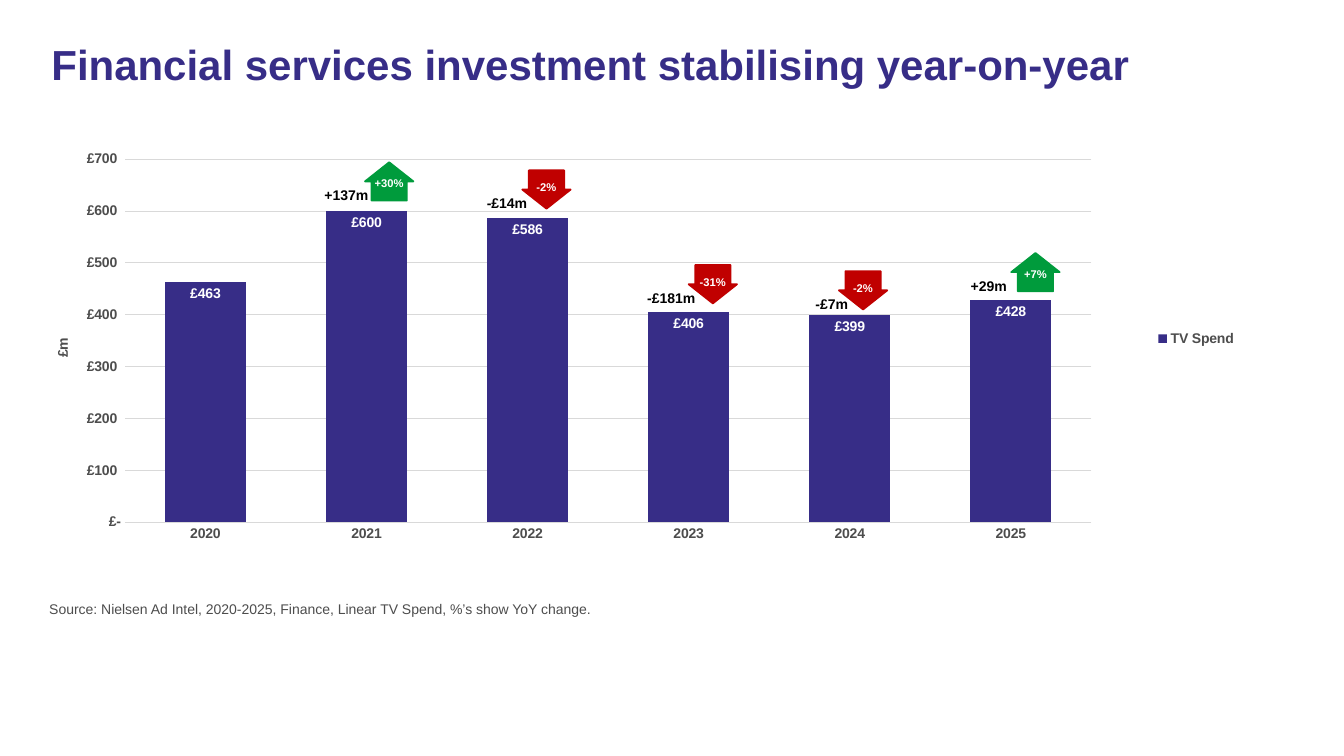
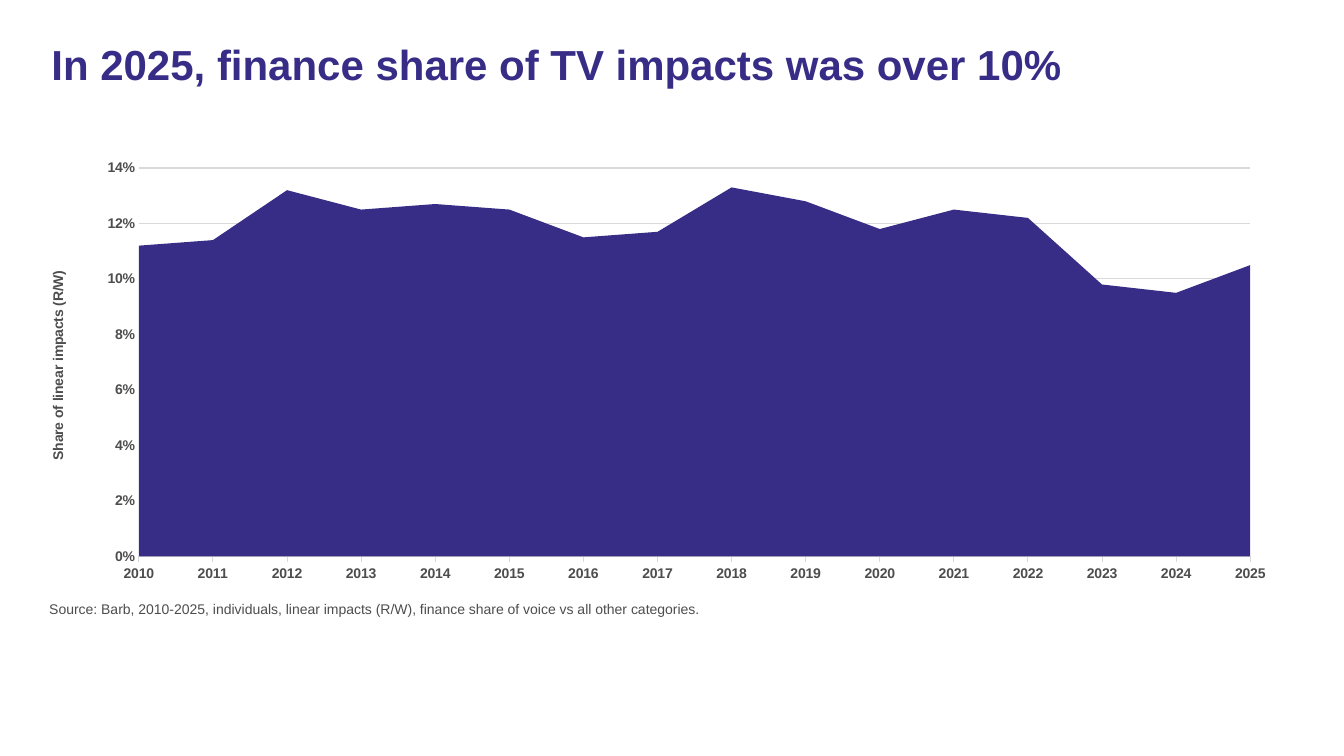
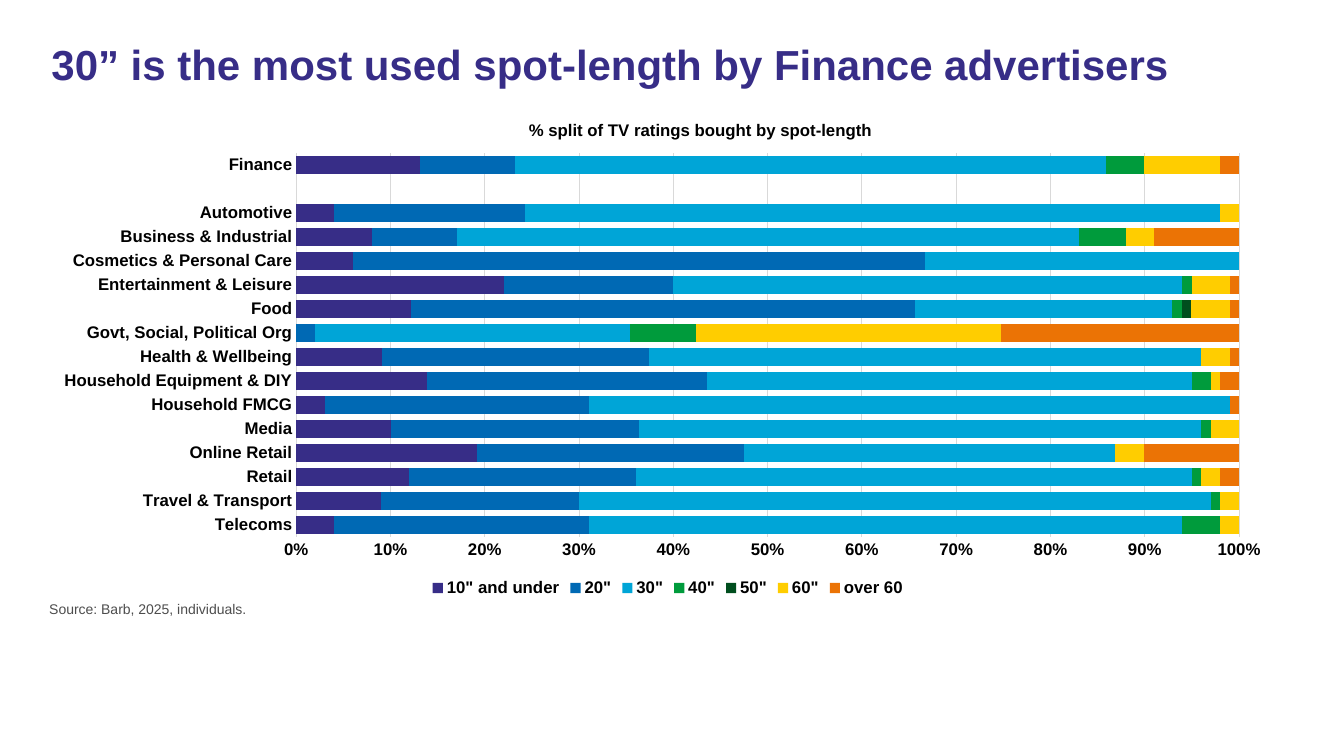
from lxml import etree
from pptx import Presentation
from pptx import util as u
from pptx.chart import data as chart_data
from pptx.dml import color as dml
from pptx.enum import chart as kinds
from pptx.enum import shapes, text
from pptx.oxml import ns

PURPLE, GREY, RULE = "372D87", "4D4D4D", "D9D9D9"
BLACK, WHITE, GREEN, RED = "000000", "FFFFFF", "009B3C", "C00000"
FONT = "Arial"
TITLE_BOX = (0.41, 0.39, 12.4, 1.12)
SOURCE_BOX = (0.39, 5.91, 12.4, 0.33)
ARROW_W, ARROW_H = 0.48, 0.38
POUNDS = '_-"£"* #,##0_-;\\-"£"* #,##0_-;_-"£"* "-"'

CHANGES = [
    ("+137m", "+30%", 3.12, 3.62, 1.61),
    ("-£14m", "-2%", 4.73, 5.18, 1.69),
    ("-£181m", "-31%", 6.32, 6.83, 2.63),
    ("-£7m", "-2%", 7.99, 8.32, 2.69),
    ("+29m", "+7%", 9.53, 10.03, 2.51),
]
SHARES = [0.112, 0.114, 0.132, 0.125, 0.127, 0.125, 0.115, 0.117,
          0.133, 0.128, 0.118, 0.125, 0.122, 0.098, 0.095, 0.105]
SECTORS = [
    "Telecoms", "Travel & Transport", "Retail", "Online Retail", "Media",
    "Household FMCG", "Household Equipment & DIY", "Health & Wellbeing",
    "Govt, Social, Political Org", "Food", "Entertainment & Leisure",
    "Cosmetics & Personal Care", "Business & Industrial", "Automotive", "",
    "Finance",
]
NA = None
SPOT_LENGTHS = [
    ('10" and under', PURPLE,
     [4, 9, 12, 19, 10, 3, 14, 9, 0, 12, 22, 6, 8, 4, NA, 13]),
    ('20"', "0069B4",
     [27, 21, 24, 28, 26, 28, 30, 28, 2, 53, 18, 60, 9, 20, NA, 10]),
    ('30"', "00A5D7",
     [63, 67, 59, 39, 59, 68, 52, 58, 33, 27, 54, 33, 66, 73, NA, 62]),
    ('40"', GREEN,
     [4, 1, 1, 0, 1, 0, 2, 0, 7, 1, 1, 0, 5, 0, NA, 4]),
    ('50"', "004E1E",
     [NA, NA, NA, NA, 0, NA, NA, NA, 0, 1, 0, NA, 0, NA, NA, 0]),
    ('60"', "FFCD00",
     [2, 2, 2, 3, 3, 0, 1, 3, 32, 4, 4, 0, 3, 2, NA, 8]),
    ("over 60", "EB7305",
     [0, 0, 2, 10, 0, 1, 2, 1, 25, 1, 1, 0, 9, 0, NA, 2]),
]


def rgb(value):
    return dml.RGBColor.from_string(value)


def inches(*lengths):
    return [u.Inches(length) for length in lengths]


def apply(target, values):
    for name, value in values.items():
        setattr(target, name, value)


def set_font(font, size, colour, bold=True):
    apply(font, {"name": FONT, "size": u.Pt(size), "bold": bold})
    font.color.rgb = rgb(colour)


def write(frame, words, size, colour, bold=True, **para_format):
    apply(frame, {"word_wrap": True, "auto_size": text.MSO_AUTO_SIZE.NONE,
                  "vertical_anchor": text.MSO_ANCHOR.TOP})
    para = frame.paragraphs[0]
    apply(para, {"alignment": text.PP_ALIGN.LEFT, **para_format})
    span = para.add_run()
    span.text = words
    set_font(span.font, size, colour, bold)


def add_text(parent, box, words, size, colour, bold=True, **para_format):
    label = parent.add_textbox(*inches(*box))
    write(label.text_frame, words, size, colour, bold, **para_format)


def add_page(deck, heading, source):
    page = deck.slides.add_slide(deck.slide_layouts[5])
    title = page.shapes.title
    names = ("left", "top", "width", "height")
    apply(title, dict(zip(names, inches(*TITLE_BOX))))
    write(title.text_frame, heading, 30, PURPLE, line_spacing=0.9)
    add_text(page.shapes, SOURCE_BOX, source, 10, GREY, False)
    return page


def place(element, **fractions):
    for old in element.findall(ns.qn("c:layout")):
        element.remove(old)
    layout = etree.Element(ns.qn("c:layout"))
    manual = etree.SubElement(layout, ns.qn("c:manualLayout"))
    if "w" in fractions:
        etree.SubElement(manual, ns.qn("c:layoutTarget")).set("val", "inner")
    for key in ("x", "y"):
        etree.SubElement(manual, ns.qn(f"c:{key}Mode")).set("val", "edge")
    for key, value in fractions.items():
        etree.SubElement(manual, ns.qn(f"c:{key}")).set("val", str(value))
    before = (ns.qn("c:tx"), ns.qn("c:legendPos"))
    element.insert(sum(child.tag in before for child in element), layout)


def add_chart(page, box, kind, categories, series, plot, size, colour):
    data = chart_data.CategoryChartData()
    data.categories = categories
    for name, _, values in series:
        data.add_series(name, values)
    chart = page.shapes.add_chart(kind, *inches(*box), data).chart
    set_font(chart.font, size, colour)
    apply(chart, {"has_title": False, "has_legend": False})
    for item, (_, fill, _) in zip(chart.plots[0].series, series):
        item.format.fill.solid()
        item.format.fill.fore_color.rgb = rgb(fill)
    chart.plots[0].vary_by_categories = False
    x, y, w, h = plot
    place(chart.element.find(f".//{ns.qn('c:plotArea')}"), x=x, y=y, w=w, h=h)
    return chart


def style_axes(chart, size, colour, number_format, scale=None,
               category_tick=kinds.XL_TICK_MARK.NONE):
    category, value = chart.category_axis, chart.value_axis
    for axis, tick in ((category, category_tick),
                       (value, kinds.XL_TICK_MARK.NONE)):
        apply(axis, {"major_tick_mark": tick,
                     "minor_tick_mark": kinds.XL_TICK_MARK.NONE})
        set_font(axis.tick_labels.font, size, colour)
    category.has_major_gridlines = False
    value.has_major_gridlines = True
    for line in (category.format.line, value.major_gridlines.format.line):
        line.color.rgb = rgb(RULE)
        line.width = u.Pt(0.75)
    value.format.line.fill.background()
    apply(value.tick_labels, {"number_format": number_format,
                              "number_format_is_linked": False})
    if scale:
        names = ("minimum_scale", "maximum_scale", "major_unit")
        apply(value, dict(zip(names, scale)))


def title_chart_part(title, words, size, colour, x, y):
    span = title.text_frame.paragraphs[0].add_run()
    span.text = words
    set_font(span.font, size, colour)
    place(title._element, x=x, y=y)


def title_value_axis(chart, words, x, y):
    title = chart.value_axis.axis_title
    title_chart_part(title, words, 10, GREY, x, y)
    body = title._element.find(f".//{ns.qn('a:bodyPr')}")
    body.set("rot", "-5400000")
    body.set("vert", "horz")


def add_legend(chart, position, size, colour, x, y):
    chart.has_legend = True
    apply(chart.legend, {"position": position, "include_in_layout": False})
    set_font(chart.legend.font, size, colour)
    place(chart.legend._element, x=x, y=y)


def add_change(page, amount, percent, amount_left, left, top):
    rising = amount.startswith("+")
    fill = rgb(GREEN if rising else RED)
    group = page.shapes.add_group_shape().shapes
    add_text(group, (amount_left, top + 0.19, 0.74, 0.27), amount, 10, BLACK)
    arrow = group.add_shape(shapes.MSO_SHAPE.UP_ARROW,
                            *inches(left, top, ARROW_W, ARROW_H))
    arrow.adjustments[0] = 0.73
    arrow.adjustments[1] = 0.5
    arrow.rotation = 0 if rising else 180
    arrow.shadow.inherit = False
    arrow.fill.solid()
    arrow.fill.fore_color.rgb = fill
    arrow.line.color.rgb = fill
    arrow.line.width = u.Pt(1.25)
    label_width = 0.6
    label_left = left + (ARROW_W - label_width) / 2
    label_top = top + (0.09 if rising else 0.05)
    add_text(group, (label_left, label_top, label_width, 0.24), percent, 8,
             WHITE, alignment=text.PP_ALIGN.CENTER)


def build_spend(deck):
    page = add_page(
        deck, "Financial services investment stabilising year-on-year",
        "Source: Nielsen Ad Intel, 2020-2025, Finance, Linear TV Spend, "
        "%’s show YoY change.")
    years = [str(year) for year in range(2020, 2026)]
    series = [("TV Spend", PURPLE, [463, 600, 586, 406, 399, 428])]
    chart = add_chart(page, (0.47, 1.38, 12.4, 4.36),
                      kinds.XL_CHART_TYPE.COLUMN_CLUSTERED, years, series,
                      (0.062, 0.046, 0.773, 0.826), 10, BLACK)
    style_axes(chart, 10, GREY, POUNDS, (0, 700, 100))
    title_value_axis(chart, "£m", 0.003, 0.447)
    add_legend(chart, kinds.XL_LEGEND_POSITION.RIGHT, 10, GREY, 0.885, 0.427)
    bars = chart.plots[0]
    apply(bars, {"gap_width": 100, "overlap": -27, "has_data_labels": True})
    apply(bars.data_labels, {
        "show_value": True, "number_format": POUNDS,
        "number_format_is_linked": False,
        "position": kinds.XL_LABEL_POSITION.INSIDE_END})
    set_font(bars.data_labels.font, 10, WHITE)
    for change in CHANGES:
        add_change(page, *change)


def build_share(deck):
    page = add_page(
        deck, "In 2025, finance share of TV impacts was over 10%",
        "Source: Barb, 2010-2025, individuals, linear impacts (R/W), "
        "finance share of voice vs all other categories.")
    years = [str(year) for year in range(2010, 2026)]
    chart = add_chart(page, (0.41, 1.51, 12.4, 4.36),
                      kinds.XL_CHART_TYPE.AREA, years,
                      [("Series 1", PURPLE, SHARES)],
                      (0.078, 0.036, 0.889, 0.884), 10, GREY)
    style_axes(chart, 10, GREY, "0%", (0, 0.14, 0.02),
               kinds.XL_TICK_MARK.OUTSIDE)
    title_value_axis(chart, "Share of linear impacts (R/W)", 0.004, 0.264)
    crossing = chart.element.find(f".//{ns.qn('c:crossBetween')}")
    crossing.set("val", "midCat")


def build_spot_lengths(deck):
    page = add_page(
        deck, "30” is the most used spot-length by Finance advertisers",
        "Source: Barb, 2025, individuals.")
    chart = add_chart(page, (0.39, 0.99, 12.37, 4.99),
                      kinds.XL_CHART_TYPE.BAR_STACKED_100, SECTORS,
                      SPOT_LENGTHS, (0.206, 0.106, 0.756, 0.763), 12, BLACK)
    style_axes(chart, 12, BLACK, "0%")
    apply(chart.plots[0], {"gap_width": 30, "overlap": 100})
    chart.has_title = True
    title_chart_part(chart.chart_title,
                     "% split of TV ratings bought by spot-length",
                     12, BLACK, 0.39, 0.034)
    add_legend(chart, kinds.XL_LEGEND_POSITION.BOTTOM, 12, BLACK, 0.311, 0.945)


def main():
    deck = Presentation()
    apply(deck, {"slide_width": u.Inches(13.33),
                 "slide_height": u.Inches(7.5)})
    for build in (build_spend, build_share, build_spot_lengths):
        build(deck)
    deck.save("out.pptx")


if __name__ == "__main__":
    main()
